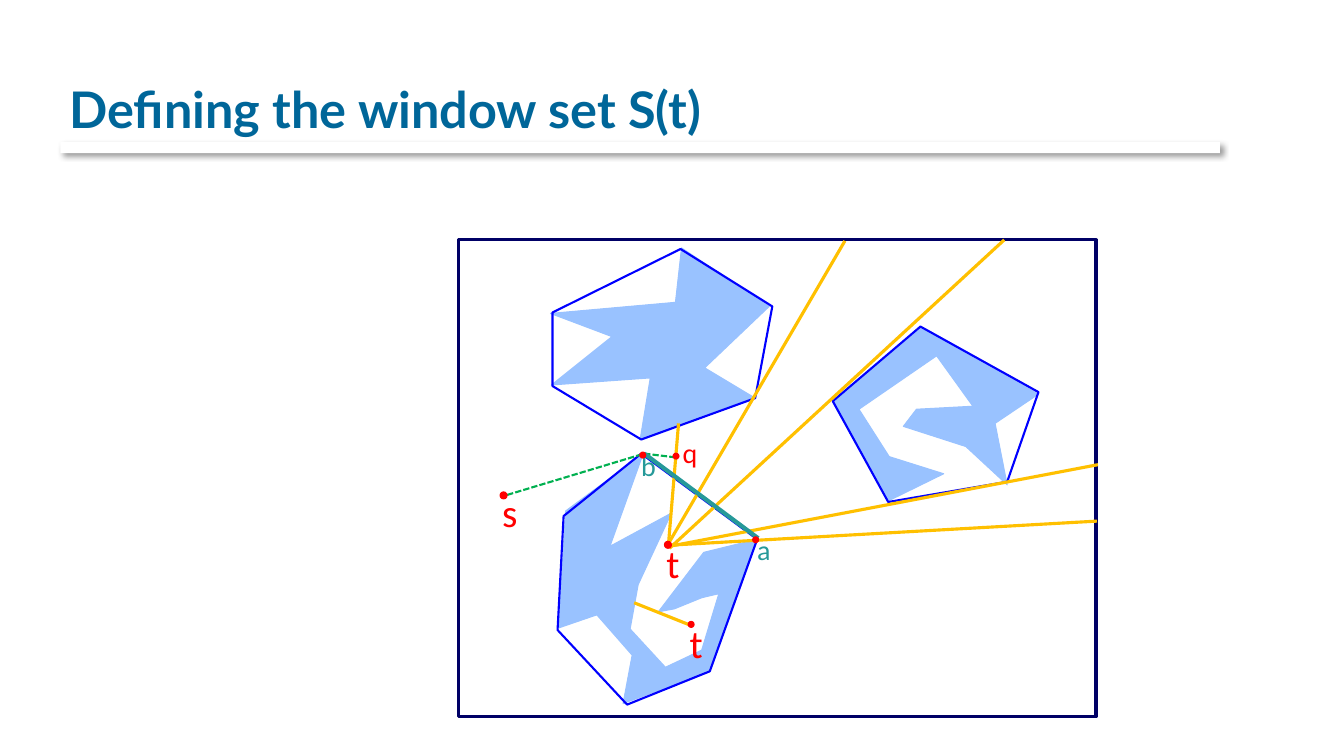
from lxml import etree
from pptx import Presentation
from pptx.dml.color import RGBColor
from pptx.enum.dml import MSO_LINE
from pptx.enum.shapes import MSO_CONNECTOR, MSO_SHAPE
from pptx.enum.text import MSO_ANCHOR, PP_ALIGN
from pptx.oxml.ns import qn
from pptx.util import Inches, Pt

RECT, OVAL = MSO_SHAPE.RECTANGLE, MSO_SHAPE.OVAL
STRAIGHT = MSO_CONNECTOR.STRAIGHT
DASH = MSO_LINE.SQUARE_DOT
BOTTOM, TOP = MSO_ANCHOR.BOTTOM, MSO_ANCHOR.TOP
LEFT, CENTER = PP_ALIGN.LEFT, PP_ALIGN.CENTER

COLORS = {
    "title": "006699", "rule": "FFFFFF", "shadow": "000000",
    "obstacle": "99C2FF", "hull": "0000FF", "frame": "000066",
    "ray": "FFC000", "path": "00B050", "window": "269999", "point": "FF0000",
}
DOT = 0.07

# Diagram coordinates are inches from the top left of the frame
OBSTACLES = [
    [(5.75, 1.53), (4.59, 0.87), (3.71, 1.61), (4.26, 2.59), (4.81, 2.32),
     (4.27, 2.15), (3.97, 1.68), (4.74, 1.15), (5.1, 1.65), (4.54, 1.68),
     (4.41, 1.85), (5.03, 2.05), (5.44, 2.43), (5.32, 1.82)],
    [(2.15, 0.62), (0.91, 0.73), (1.52, 0.96), (0.92, 1.44), (1.9, 1.37),
     (1.8, 1.98), (2.94, 1.57), (2.44, 1.27), (3.08, 0.66), (2.21, 0.08)],
    [(0.99, 3.85), (1.06, 2.69), (1.83, 2.12), (1.5, 3.04), (2.11, 2.71),
     (1.78, 3.42), (1.7, 3.86), (2.05, 4.24), (2.41, 4.07), (2.58, 3.51),
     (2.41, 3.55), (2.14, 3.66), (1.98, 3.69), (2.43, 3.1), (2.96, 2.97),
     (2.49, 4.28), (1.63, 4.6), (1.72, 4.12), (1.37, 3.72)],
]
HULLS = [
    [(1.81, 1.98), (0.93, 1.45), (0.93, 0.72), (2.2, 0.09), (3.11, 0.66), (2.94, 1.57)],
    [(2.96, 2.97), (1.81, 2.12), (1.04, 2.74), (0.98, 3.87), (1.67, 4.61), (2.49, 4.28)],
    [(4.26, 2.6), (3.71, 1.6), (4.58, 0.86), (5.75, 1.51), (5.44, 2.4)],
]
RAYS = [
    ((2.29, 3.82), (1.74, 3.6)), ((2.08, 3.02), (2.18, 1.82)),
    ((2.07, 3.03), (6.33, 2.79)), ((2.09, 3.04), (6.34, 2.23)),
    ((2.09, 3.06), (5.41, 0)), ((2.07, 3.03), (3.83, 0.01)),
]
PATH = [(0.48, 2.53), (1.84, 2.12), (2.17, 2.16)]
WINDOW = ((2.97, 2.96), (1.84, 2.12))
# Name, label corner, dot corner, size, label colour, dot outline
POINTS = [
    ("t", (2.22, 3.71), (2.27, 3.78), 28, "point", None),
    ("t", (1.99, 2.92), (2.04, 2.99), 28, "point", "point"),
    ("q", (2.15, 1.89), (2.12, 2.11), 20, "point", None),
    ("s", (0.36, 2.42), (0.41, 2.5), 28, "point", "point"),
    ("a", (2.89, 2.85), (2.91, 2.94), 20, "window", None),
    ("b", (1.74, 2.02), (1.79, 2.1), 20, "window", None),
]


def rgb(name):
    return RGBColor.from_string(COLORS[name])


def style(sp, fill=None, line=None, width=0.75):
    sp.shadow.inherit = False
    if fill:
        sp.fill.solid()
        sp.fill.fore_color.rgb = rgb(fill)
    else:
        sp.fill.background()
    if line:
        sp.line.color.rgb = rgb(line)
        sp.line.width = Pt(width)
    else:
        sp.line.fill.background()


def add_preset(s, kind, box, **look):
    sp = s.shapes.add_shape(kind, *map(Inches, box))
    style(sp, **look)
    return sp


def add_outline(s, origin, points, close=True, **look):
    corners = [(Inches(origin[0] + x), Inches(origin[1] + y)) for x, y in points]
    builder = s.shapes.build_freeform(*corners[0])
    builder.add_line_segments(corners[1:], close=close)
    sp = builder.convert_to_shape()
    style(sp, **look)
    return sp


def add_line(s, origin, ends, color, width):
    coords = [Inches(o + v) for end in ends for o, v in zip(origin, end)]
    line = s.shapes.add_connector(STRAIGHT, *coords)
    line.line.color.rgb = rgb(color)
    line.line.width = Pt(width)
    etree.SubElement(line._element.spPr, qn("a:effectLst"))


def add_text(s, box, text, color, font, frame, align=LEFT):
    tf = s.shapes.add_textbox(*map(Inches, box)).text_frame
    for name, value in frame.items():
        setattr(tf, name, value)
    p = tf.paragraphs[0]
    p.alignment = align
    r = p.add_run()
    r.text = text
    for name, value in font.items():
        setattr(r.font, name, value)
    r.font.color.rgb = rgb(color)


def add_header(s, x, y, w, h):
    # Rule with a soft shadow
    rule = add_preset(s, RECT, (x + 0.01, y + h - 0.01, w + 0.17, 0.11), fill="rule")
    effects = rule._element.spPr.find(qn("a:effectLst"))
    shadow = etree.SubElement(effects, qn("a:outerShdw"), blurRad=str(Pt(4)),
                              dist=str(Pt(3)), dir="2700000", algn="tl", rotWithShape="0")
    tint = etree.SubElement(shadow, qn("a:srgbClr"), val=COLORS["shadow"])
    etree.SubElement(tint, qn("a:alpha"), val="40000")
    # Title
    add_text(s, (x, y, w, h), "Defining the window set S(t)", "title",
             {"name": "Lato", "size": Pt(36), "bold": True},
             {"word_wrap": True, "vertical_anchor": BOTTOM})


def add_point(s, origin, name, label, dot, size, color, outline):
    x, y = origin
    height = 0.57 if size == 28 else 0.44
    add_text(s, (x + label[0], y + label[1], 0.13, height), name, color,
             {"name": "Calibri", "size": Pt(size)},
             {"word_wrap": False, "vertical_anchor": TOP,
              "margin_left": Inches(0.07), "margin_right": 0}, CENTER)
    add_preset(s, OVAL, (x + dot[0], y + dot[1], DOT, DOT), fill="point", line=outline)


def add_diagram(s, x, y, w, h):
    origin = (x, y)
    # Obstacles and their convex hulls
    for points in OBSTACLES:
        add_outline(s, origin, points, fill="obstacle", line="obstacle")
    for points in HULLS:
        add_outline(s, origin, points, line="hull", width=1.5)
    add_preset(s, RECT, (x, y, w, h), line="frame", width=2.25)
    # Sight lines, path and window
    for ends in RAYS:
        add_line(s, origin, ends, "ray", 2.25)
    path = add_outline(s, origin, PATH, close=False, line="path", width=1.5)
    path.line.dash_style = DASH
    add_line(s, origin, WINDOW, "window", 3)
    # Named points
    for point in POINTS:
        add_point(s, origin, *point)


def main():
    prs = Presentation()
    prs.slide_width, prs.slide_height = Inches(13.33), Inches(7.5)
    s = prs.slides.add_slide(prs.slide_layouts[6])
    add_header(s, 0.59, 0.17, 11.33, 1.25)
    add_diagram(s, 4.55, 2.38, 6.32, 4.73)
    prs.save("out.pptx")


if __name__ == "__main__":
    main()
